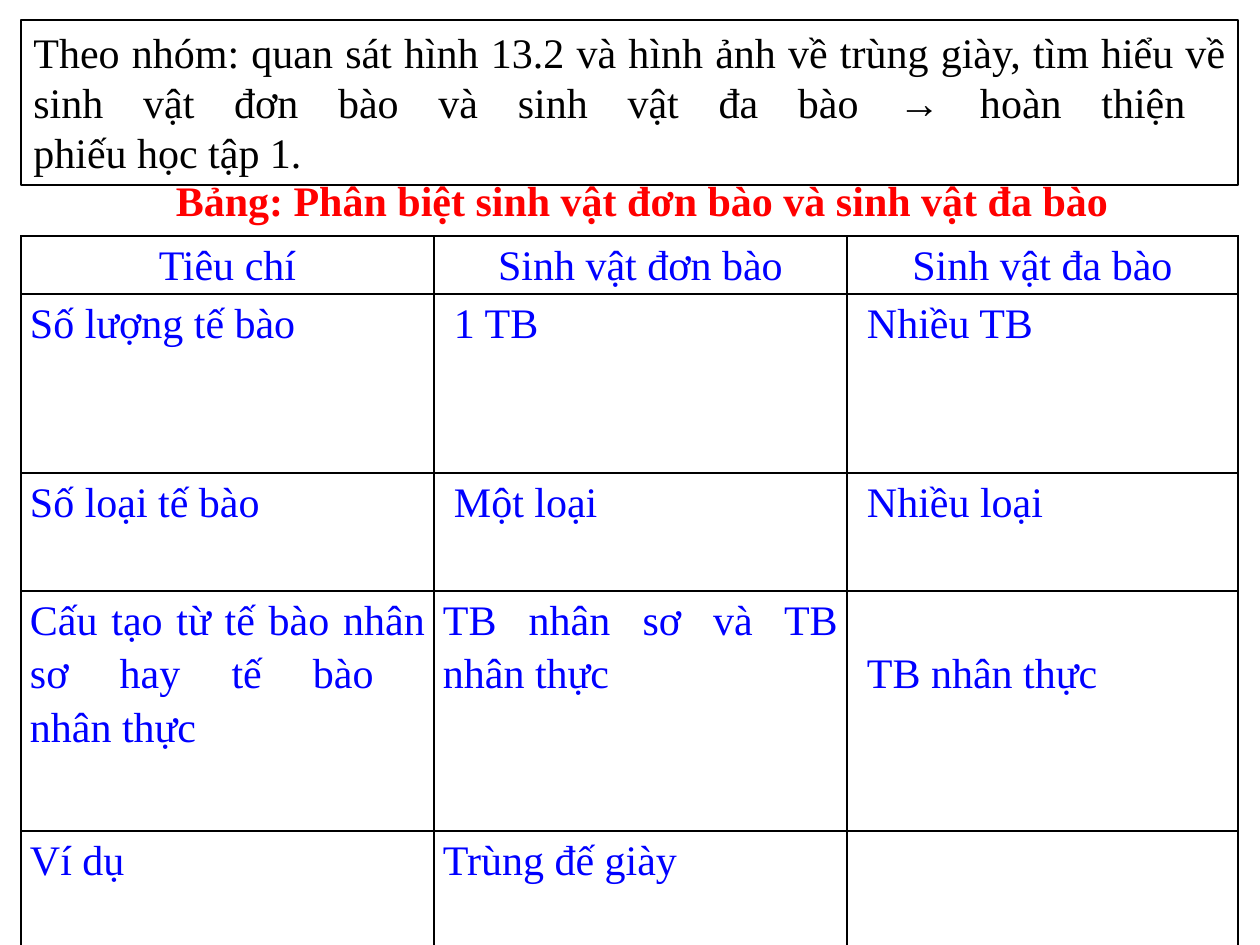
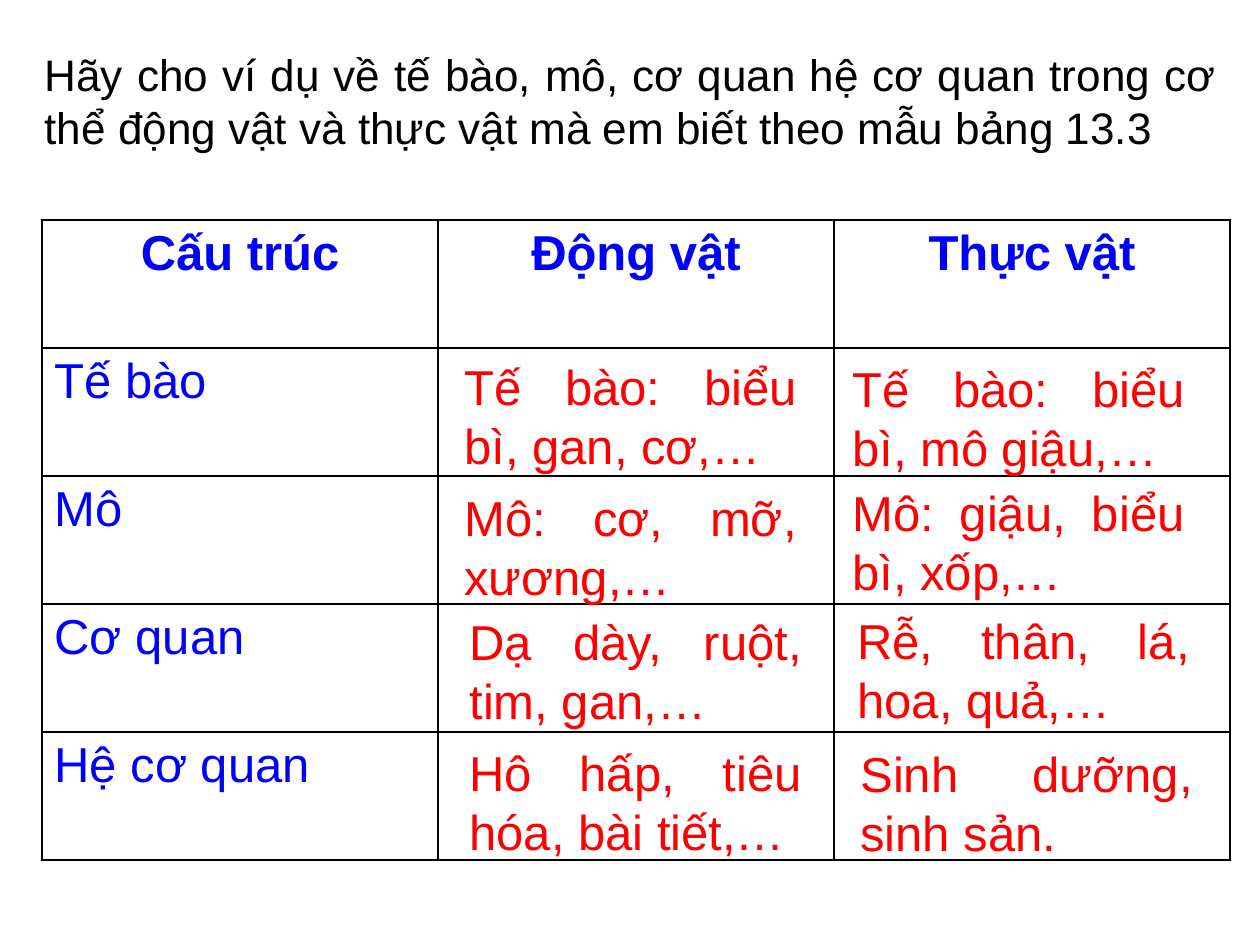
from collections import namedtuple
from dataclasses import dataclass

from lxml.etree import SubElement
from pptx import Presentation
from pptx.dml.color import RGBColor
from pptx.enum.shapes import MSO_SHAPE
from pptx.enum.text import MSO_ANCHOR, MSO_AUTO_SIZE, PP_ALIGN
from pptx.oxml.ns import qn
from pptx.util import Emu, Pt

Box = namedtuple("Box", "left top width height")
Style = namedtuple("Style", "font size color bold", defaults=[False])


@dataclass(frozen=True)
class Theme:
    black: str = "000000"
    blue: str = "0000FF"
    red: str = "FF0000"
    serif: str = "Times New Roman"
    sans: str = "Arial"
    serif_size: float = 24
    title_size: float = 25.2
    sans_size: float = 28
    frame_line: float = 0.75
    grid_line: float = 1


THEME = Theme()
TASK = Style(THEME.serif, THEME.serif_size, THEME.black)
CAPTION = Style(THEME.serif, THEME.serif_size, THEME.red, True)
CRITERIA = Style(THEME.serif, THEME.serif_size, THEME.blue)
TITLE = Style(THEME.sans, THEME.title_size, THEME.black)
HEADING = Style(THEME.sans, THEME.sans_size, THEME.blue, True)
STRUCTURE = Style(THEME.sans, THEME.sans_size, THEME.blue)
ANSWER = Style(THEME.sans, THEME.sans_size, THEME.red)

SLIDE_WIDTH, SLIDE_HEIGHT = 1260, 945
TITLE_ONLY, BLANK = 5, 6
CELL_INSET = 9      # side margin of the comparison table
CELL_INDENT = 20    # side margin of its short answers
CELL_LINE = 53      # height of one line in it

# Each cell: text, left margin, top margin
COMPARISON = [
    [("Tiêu chí", CELL_INSET, 0), ("Sinh vật đơn bào", CELL_INSET, 0),
     ("Sinh vật đa bào", CELL_INSET, 0)],
    [("Số lượng tế bào", CELL_INSET, 0), ("1 TB", CELL_INDENT, 0),
     ("Nhiều TB", CELL_INDENT, 0)],
    [("Số loại tế bào", CELL_INSET, 0), ("Một loại", CELL_INDENT, 0),
     ("Nhiều loại", CELL_INDENT, 0)],
    [("Cấu tạo từ tế bào nhân sơ hay tế bào \nnhân thực", CELL_INSET, 0),
     ("TB nhân sơ và TB nhân thực", CELL_INSET, 0),
     ("TB nhân thực", CELL_INDENT, CELL_LINE)],
    [("Ví dụ", CELL_INSET, 0), ("Trùng đế giày", CELL_INSET, 0),
     ("", CELL_INSET, 0)],
]
HEADINGS = ["Cấu trúc", "Động vật", "Thực vật"]
# Each structure with its answers: text, offset from the cell's corner
EXAMPLES = [
    ("Tế bào", [("Tế bào: biểu bì, gan, cơ,…", 14, 2),
                ("Tế bào: biểu bì, mô giậu,…", 6, 4)]),
    ("Mô", [("Mô: cơ, mỡ, xương,…", 14, 5),
            ("Mô: giậu, biểu bì, xốp,…", 6, 0)]),
    ("Cơ quan", [("Dạ dày, ruột, tim, gan,…", 19, 1),
                 ("Rễ, thân, lá, hoa, quả,…", 11, 0)]),
    ("Hệ cơ quan", [("Hô hấp, tiêu hóa, bài tiết,…", 19, 4),
                    ("Sinh dưỡng, sinh sản.", 14, 5)]),
]


def px(length):
    return Emu(round(length * 914400 / 126))


def emu(box):
    return [px(length) for length in box]


def write(frame, text, style, align, spacing=None):
    paragraph = frame.paragraphs[0]
    paragraph.alignment = align
    if spacing:
        paragraph.line_spacing = spacing
    for index, line in enumerate(text.split("\n")):
        if index:
            paragraph.add_line_break()
        run = paragraph.add_run()
        run.text = line
        run.font.name = style.font
        run.font.size = Pt(style.size)
        run.font.bold = style.bold
        run.font.color.rgb = RGBColor.from_string(style.color)


def add_text(slide, box, text, style, align, wrap=True, anchor=MSO_ANCHOR.TOP):
    frame = slide.shapes.add_textbox(*emu(box)).text_frame
    frame.word_wrap = wrap
    frame.auto_size = MSO_AUTO_SIZE.SHAPE_TO_FIT_TEXT
    frame.vertical_anchor = anchor
    write(frame, text, style, align)


def rule_cell(cell):
    """Clear the cell's fill and draw its four borders."""
    cell.fill.background()
    properties = cell._tc.get_or_add_tcPr()
    for index, side in enumerate(("a:lnL", "a:lnR", "a:lnT", "a:lnB")):
        border = SubElement(properties, qn(side), w=str(Pt(THEME.grid_line)))
        fill = SubElement(border, qn("a:solidFill"))
        SubElement(fill, qn("a:srgbClr"), val=THEME.black)
        properties.insert(index, border)


def add_grid(slide, left, top, widths, heights):
    box = Box(left, top, sum(widths), sum(heights))
    grid = slide.shapes.add_table(len(heights), len(widths), *emu(box)).table
    grid.first_row = grid.horz_banding = False
    for column, width in zip(grid.columns, widths):
        column.width = px(width)
    for row, height in zip(grid.rows, heights):
        row.height = px(height)
    for cell in grid.iter_cells():
        rule_cell(cell)
    return grid


def add_task(slide, box):
    task = slide.shapes.add_shape(MSO_SHAPE.RECTANGLE, *emu(box))
    task.shadow.inherit = False
    task.fill.background()
    task.line.color.rgb = RGBColor.from_string(THEME.black)
    task.line.width = Pt(THEME.frame_line)
    frame = task.text_frame
    frame.word_wrap = True
    frame.auto_size = MSO_AUTO_SIZE.SHAPE_TO_FIT_TEXT
    frame.vertical_anchor = MSO_ANCHOR.TOP
    write(frame, "Theo nhóm: quan sát hình 13.2 và hình ảnh về trùng giày, "
          "tìm hiểu về sinh vật đơn bào và sinh vật đa bào → hoàn thiện "
          "\nphiếu học tập 1.", TASK, PP_ALIGN.JUSTIFY)


def add_comparison(slide, left, top):
    grid = add_grid(slide, left, top, [413, 413, 391], [58, 179, 118, 240, 118])
    for r, row in enumerate(COMPARISON):
        align = PP_ALIGN.JUSTIFY if r else PP_ALIGN.CENTER
        for c, (text, indent, drop) in enumerate(row):
            cell = grid.cell(r, c)
            cell.margin_left, cell.margin_right = px(indent), px(CELL_INSET)
            cell.margin_top, cell.margin_bottom = px(drop), 0
            if text:
                write(cell.text_frame, text, CRITERIA, align, 1.15)


def add_examples(slide, box):
    columns, rows = len(HEADINGS), len(EXAMPLES) + 1
    width, height = box.width // columns, box.height // rows
    grid = add_grid(slide, box.left, box.top, [width] * columns, [height] * rows)
    for c, heading in enumerate(HEADINGS):
        write(grid.cell(0, c).text_frame, heading, HEADING, PP_ALIGN.CENTER)
    for r, (structure, answers) in enumerate(EXAMPLES, 1):
        write(grid.cell(r, 0).text_frame, structure, STRUCTURE, PP_ALIGN.LEFT)
        # Answers lie over the empty cells
        for c, (answer, dx, dy) in enumerate(answers, 1):
            place = Box(box.left + c * width + dx, box.top + r * height + dy, 357, 131)
            add_text(slide, place, answer, ANSWER, PP_ALIGN.JUSTIFY)


def build_comparison_slide(deck):
    slide = deck.slides.add_slide(deck.slide_layouts[BLANK])
    add_task(slide, Box(21, 20, 1217, 165))
    add_comparison(slide, 21, 236)
    add_text(slide, Box(158, 168, 968, 63),
             "Bảng: Phân biệt sinh vật đơn bào và sinh vật đa bào",
             CAPTION, PP_ALIGN.CENTER, wrap=False, anchor=MSO_ANCHOR.MIDDLE)


def build_examples_slide(deck):
    slide = deck.slides.add_slide(deck.slide_layouts[TITLE_ONLY])
    title = slide.shapes.title
    title.left, title.top, title.width, title.height = emu(Box(32, 21, 1197, 158))
    title.text_frame.vertical_anchor = MSO_ANCHOR.MIDDLE
    write(title.text_frame, "Hãy cho ví dụ về tế bào, mô, cơ quan hệ cơ quan trong "
          "cơ thể động vật và thực vật mà em biết theo mẫu bảng 13.3",
          TITLE, PP_ALIGN.JUSTIFY)
    add_examples(slide, Box(42, 220, 1188, 640))


def main():
    deck = Presentation()
    deck.slide_width, deck.slide_height = px(SLIDE_WIDTH), px(SLIDE_HEIGHT)
    build_comparison_slide(deck)
    build_examples_slide(deck)
    deck.save("out.pptx")


if __name__ == "__main__":
    main()
